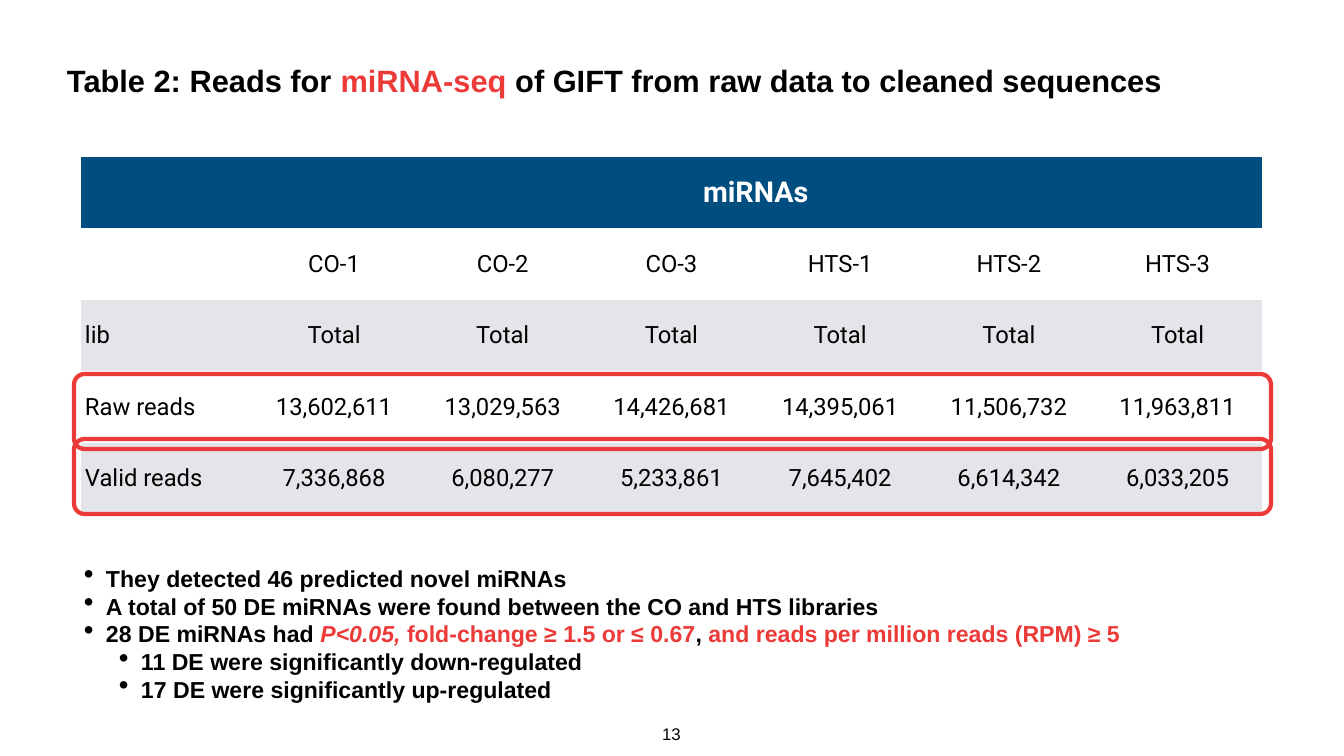
"""Build the slide that summarises miRNA sequencing reads."""
from dataclasses import dataclass
from typing import NamedTuple

from lxml.etree import SubElement
from pptx import Presentation
from pptx.dml.color import RGBColor
from pptx.enum.shapes import MSO_SHAPE
from pptx.enum.text import MSO_ANCHOR, MSO_AUTO_SIZE, PP_ALIGN
from pptx.oxml.ns import qn
from pptx.slide import Slide
from pptx.text.text import TextFrame
from pptx.util import Emu, Pt

EMU_PER_PX = 18143
NO_GRID_STYLE = "{2D5ABB26-0587-4C30-8999-92F81FD0307C}"


@dataclass(frozen=True)
class Theme:
    body_font: str = "Arial"
    table_font: str = "Roboto"
    black: RGBColor = RGBColor(0x00, 0x00, 0x00)
    white: RGBColor = RGBColor(0xFF, 0xFF, 0xFF)
    red: RGBColor = RGBColor(0xEB, 0x3A, 0x37)
    header: RGBColor = RGBColor(0x00, 0x4D, 0x80)
    band: RGBColor = RGBColor(0xE3, 0xE5, 0xE8)
    title_size: int = 44
    header_size: int = 41
    cell_size: int = 34
    bullet_size: int = 33
    number_size: int = 24
    outline_width: int = 6


THEME = Theme()


class Box(NamedTuple):
    left: int
    top: int
    width: int
    height: int


class Span(NamedTuple):
    text: str
    color: RGBColor = THEME.black
    italic: bool = False


class Bullet(NamedTuple):
    spans: list[Span]
    level: int = 0


TITLE = [
    Span("Table 2: Reads for "),
    Span("miRNA-seq ", THEME.red),
    Span("of GIFT from raw data to cleaned sequences"),
]
LIBRARIES = [f"{group}-{number}" for group in ("CO", "HTS") for number in (1, 2, 3)]
ROWS = [
    ["", "miRNAs"],
    ["", *LIBRARIES],
    ["lib", *["Total"] * len(LIBRARIES)],
    ["Raw reads", "13,602,611", "13,029,563", "14,426,681", "14,395,061", "11,506,732", "11,963,811"],
    ["Valid reads", "7,336,868", "6,080,277", "5,233,861", "7,645,402", "6,614,342", "6,033,205"],
]
BULLETS = [
    Bullet([Span("They detected 46 predicted novel miRNAs")]),
    Bullet([Span("A total of 50 DE miRNAs were found between the CO and HTS libraries")]),
    Bullet([
        Span("28 DE miRNAs had "),
        Span("P<0.05,", THEME.red, True),
        Span(" fold-change ≥ 1.5 or ≤ 0.67", THEME.red),
        Span(","),
        Span(" and reads per million reads (RPM) ≥ 5", THEME.red),
    ]),
    Bullet([Span("11 DE were significantly down-regulated")], 1),
    Bullet([Span("17 DE were significantly up-regulated")], 1),
]
OUTLINES = [Box(74, top, 1197, 75) for top in (374, 439)]


def px(length: int) -> Emu:
    return Emu(length * EMU_PER_PX)


def scaled(box: Box) -> list[Emu]:
    return [px(length) for length in box]


def set_attributes(target, values: dict) -> None:
    for name, value in values.items():
        setattr(target, name, value)


def add_spans(paragraph, spans: list[Span], size: int, font: str = THEME.body_font, bold: bool = True) -> None:
    for span in spans:
        run = paragraph.add_run()
        run.text = span.text
        set_attributes(run.font, {"name": font, "size": Pt(size), "bold": bold, "italic": span.italic})
        run.font.color.rgb = span.color


def add_text_frame(slide: Slide, box: Box, values: dict) -> TextFrame:
    text_frame = slide.shapes.add_textbox(*scaled(box)).text_frame
    margins = {f"margin_{side}": px(3) for side in ("left", "top", "right", "bottom")}
    set_attributes(text_frame, {"word_wrap": True, "vertical_anchor": MSO_ANCHOR.MIDDLE, **margins, **values})
    return text_frame


def add_page_number(slide: Slide, box: Box, number: int) -> None:
    values = {"word_wrap": False, "vertical_anchor": MSO_ANCHOR.TOP, "auto_size": MSO_AUTO_SIZE.SHAPE_TO_FIT_TEXT}
    paragraph = add_text_frame(slide, box, values).paragraphs[0]
    paragraph.alignment = PP_ALIGN.CENTER
    add_spans(paragraph, [Span(str(number))], THEME.number_size, bold=False)


def add_title(slide: Slide, box: Box, spans: list[Span]) -> None:
    add_spans(add_text_frame(slide, box, {}).paragraphs[0], spans, THEME.title_size)


def add_reads_table(slide: Slide, box: Box, rows: list[list[str]]) -> None:
    frame = slide.shapes.add_table(len(rows), len(LIBRARIES) + 1, *scaled(box))
    frame.element.find(f".//{qn('a:tableStyleId')}").text = NO_GRID_STYLE
    table = frame.table
    set_attributes(table, {"first_row": False, "horz_banding": False})
    table.cell(0, 1).merge(table.cell(0, len(LIBRARIES)))
    cell_format = {
        "margin_left": px(4), "margin_right": px(4), "margin_top": 0, "margin_bottom": 0,
        "vertical_anchor": MSO_ANCHOR.MIDDLE,
    }
    for row_index, row in enumerate(table.rows):
        is_header = row_index == 0
        fill_color = THEME.header if is_header else (THEME.band, THEME.white)[row_index % 2]
        text_color = THEME.white if is_header else THEME.black
        size = THEME.header_size if is_header else THEME.cell_size
        for cell in row.cells:
            cell.fill.solid()
            cell.fill.fore_color.rgb = fill_color
            set_attributes(cell, cell_format)
        for column_index, text in enumerate(rows[row_index]):
            if text:
                paragraph = table.cell(row_index, column_index).text_frame.paragraphs[0]
                paragraph.alignment = PP_ALIGN.CENTER if column_index else PP_ALIGN.LEFT
                add_spans(paragraph, [Span(text, text_color)], size, THEME.table_font, is_header)


def add_bullets(slide: Slide, box: Box, bullets: list[Bullet]) -> None:
    text_frame = add_text_frame(slide, box, {"auto_size": MSO_AUTO_SIZE.SHAPE_TO_FIT_TEXT})
    for index, bullet in enumerate(bullets):
        paragraph = text_frame.add_paragraph() if index else text_frame.paragraphs[0]
        paragraph.level = bullet.level
        add_spans(paragraph, bullet.spans, THEME.bullet_size)
        properties = paragraph._p.get_or_add_pPr()
        properties.set("marL", str(px(22 + 35 * bullet.level)))
        properties.set("indent", str(px(-22)))
        SubElement(properties, qn("a:buSzPct")).set("val", "125000")
        SubElement(properties, qn("a:buChar")).set("char", "•")


def add_outline(slide: Slide, box: Box) -> None:
    shape = slide.shapes.add_shape(MSO_SHAPE.ROUNDED_RECTANGLE, *scaled(box))
    shape.adjustments[0] = 0.14
    shape.shadow.inherit = False
    shape.fill.background()
    shape.line.color.rgb = THEME.red
    shape.line.width = Pt(THEME.outline_width)


def main() -> None:
    presentation = Presentation()
    set_attributes(presentation, {"slide_width": px(1344), "slide_height": px(756)})
    slide = presentation.slides.add_slide(presentation.slide_layouts[6])
    add_page_number(slide, Box(659, 721, 25, 25), 13)
    add_reads_table(slide, Box(81, 157, 1181, 357), ROWS)
    add_title(slide, Box(64, 17, 1217, 126), TITLE)
    add_bullets(slide, Box(81, 561, 1181, 145), BULLETS)
    for outline in OUTLINES:
        add_outline(slide, outline)
    presentation.save("out.pptx")


if __name__ == "__main__":
    main()
